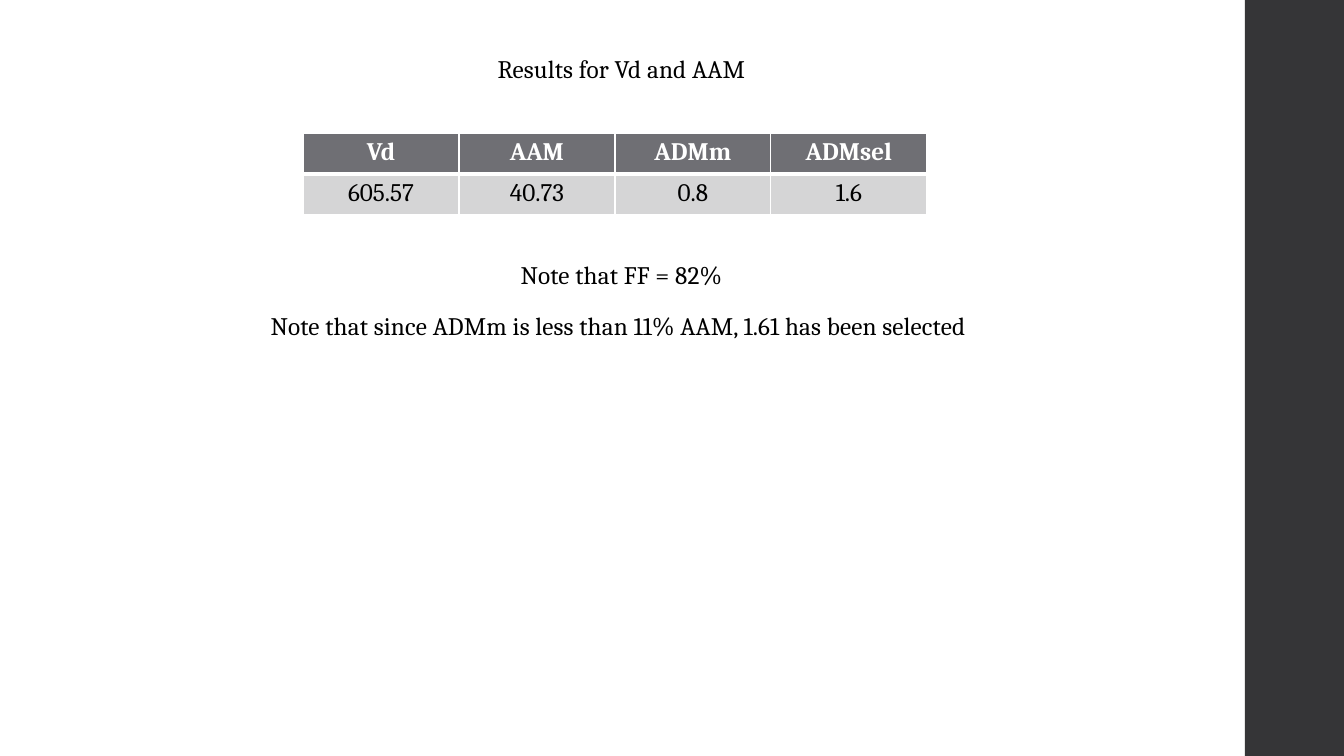
from lxml.etree import SubElement
from pptx import Presentation
from pptx.dml.color import RGBColor
from pptx.enum.shapes import MSO_SHAPE
from pptx.enum.text import PP_ALIGN
from pptx.oxml.ns import qn
from pptx.util import Emu, Pt

WHITE = RGBColor(0xFF, 0xFF, 0xFF)
BLACK = RGBColor(0x00, 0x00, 0x00)
CHARCOAL = RGBColor(0x35, 0x35, 0x37)
HEADER_GREY = RGBColor(0x6F, 0x6F, 0x74)
ROW_GREY = RGBColor(0xD5, 0xD5, 0xD6)

SLIDE_WIDTH, SLIDE_HEIGHT = 1344, 756
BODY_WIDTH = 1243
RESULTS = [
    ["Vd", "AAM", "ADMm", "ADMsel"],
    ["605.57", "40.73", "0.8", "1.6"],
]


def px(length):
    return Emu(round(length * 914400 / 100.8))


def write(paragraph, text, color=BLACK, bold=False, spacing=None):
    paragraph.alignment = PP_ALIGN.CENTER
    run = paragraph.add_run()
    run.text = text
    run.font.name = "Cambria"
    run.font.size = Pt(18)
    run.font.bold = bold
    run.font.color.rgb = color
    if spacing is not None:
        run._r.get_or_add_rPr().set("spc", str(spacing))


def add_side_bar(slide):
    shape = slide.shapes.add_shape(
        MSO_SHAPE.RECTANGLE, px(1245), px(0), px(SLIDE_WIDTH - 1245), px(SLIDE_HEIGHT)
    )
    shape.shadow.inherit = False
    shape.fill.solid()
    shape.fill.fore_color.rgb = CHARCOAL
    shape.line.fill.background()


def add_notes(slide, lines):
    top = 51
    shape = slide.shapes.add_textbox(px(0), px(top), px(BODY_WIDTH), px(SLIDE_HEIGHT - top))
    frame = shape.text_frame
    frame.word_wrap = True
    for index, (text, space_before) in enumerate(lines):
        paragraph = frame.add_paragraph() if index else frame.paragraphs[0]
        paragraph.line_spacing = 0.95
        paragraph.space_before = Pt(space_before)
        paragraph.space_after = Pt(2)
        write(paragraph, text, spacing=10)


def set_borders(cell, **widths):
    properties = cell._tc.get_or_add_tcPr()
    for position, side in enumerate(("L", "R", "T", "B")):
        line = SubElement(properties, qn(f"a:ln{side}"), w=str(Pt(widths.get(side, 1))))
        fill = SubElement(line, qn("a:solidFill"))
        SubElement(fill, qn("a:srgbClr"), val=str(WHITE))
        properties.remove(line)
        properties.insert(position, line)


def add_results_table(slide, rows):
    column_width, row_height = 156, 41
    column_count = len(rows[0])
    table = slide.shapes.add_table(
        len(rows), column_count, px(303), px(133),
        px(column_width * column_count), px(row_height * len(rows)),
    ).table
    for column in table.columns:
        column.width = px(column_width)
    for row_index, values in enumerate(rows):
        header = row_index == 0
        table.rows[row_index].height = px(row_height)
        for column_index, value in enumerate(values):
            cell = table.cell(row_index, column_index)
            cell.fill.solid()
            cell.fill.fore_color.rgb = HEADER_GREY if header else ROW_GREY
            set_borders(cell, **({"B": 3} if header else {"T": 3}))
            write(cell.text_frame.paragraphs[0], value,
                  color=WHITE if header else BLACK, bold=header)


def main():
    presentation = Presentation()
    presentation.slide_width = px(SLIDE_WIDTH)
    presentation.slide_height = px(SLIDE_HEIGHT)
    slide = presentation.slides.add_slide(presentation.slide_layouts[6])
    add_side_bar(slide)
    add_notes(slide, [
        ("Results for Vd and AAM", 0),
        ("Note that FF = 82%", 124),
        ("Note that since ADMm is less than 11% AAM, 1.61 has been selected ", 14),
    ])
    add_results_table(slide, RESULTS)
    presentation.save("out.pptx")


if __name__ == "__main__":
    main()
